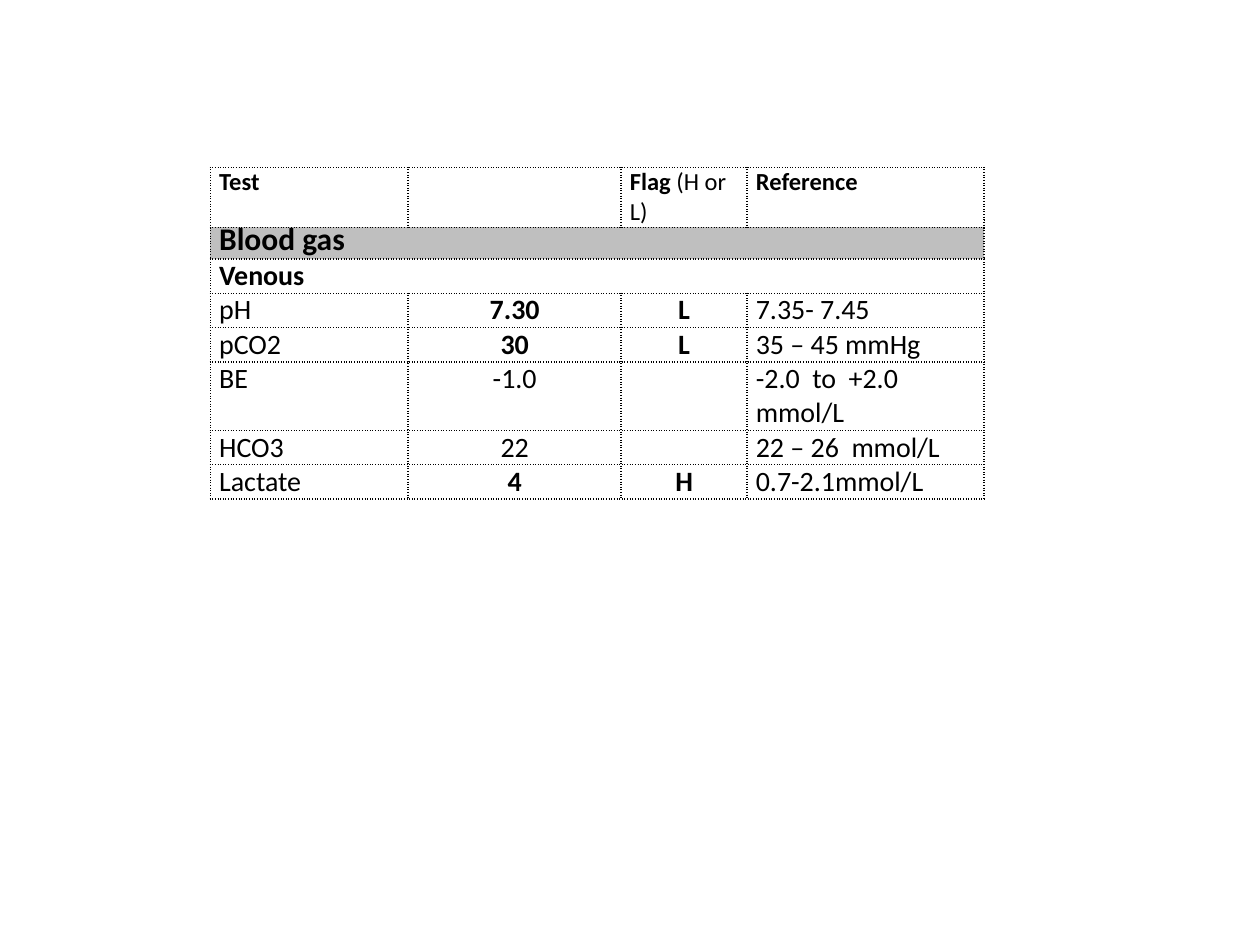
"""Build a slide with a blood gas results table."""
from dataclasses import dataclass
from itertools import product

from lxml.etree import SubElement
from pptx import Presentation
from pptx.dml.color import RGBColor as Rgb
from pptx.enum.text import PP_ALIGN as Align
from pptx.oxml import parse_xml
from pptx.oxml.ns import qn
from pptx.table import _Cell as Cell
from pptx.util import Pt


@dataclass(frozen=True)
class Theme:
    font: str = "Calibri"
    ink: Rgb = Rgb(0, 0, 0)
    band: Rgb = Rgb(0xBF, 0xBF, 0xBF)
    paper: Rgb = Rgb(255, 255, 255)
    header_size: float = 14
    section_size: float = 18
    body_size: float = 16
    border: float = 1
    inset: float = 5


@dataclass(frozen=True)
class Entry:
    text: str = ""
    bold: bool = False
    align: Align = Align.LEFT
    note: str = ""


@dataclass(frozen=True)
class Row:
    entries: tuple[Entry, ...]
    size: float
    fill: Rgb | None = None


@dataclass(frozen=True)
class Grid:
    top: float
    height: float
    row_height: float
    rows: tuple[Row, ...]


THEME = Theme()
LEFT = 120.24
COLUMNS = (113.04, 121.68, 72, 135.36)


def result(test: str, value: str, flag: str, reference: str) -> Row:
    """Return a result row, bold in the middle when it carries a flag."""
    bold = bool(flag)
    return Row(
        (
            Entry(test),
            Entry(value, bold, Align.CENTER),
            Entry(flag, bold, Align.CENTER),
            Entry(reference),
        ),
        THEME.body_size,
    )


RESULTS = Grid(
    top=126, height=156.24, row_height=13.68,
    rows=(
        Row((Entry("Blood gas", True),), THEME.section_size, THEME.band),
        Row((Entry("Venous", True),), THEME.body_size),
        result("pH", "7.30", "L", "7.35- 7.45"),
        result("pCO2", "30", "L", "35 – 45 mmHg"),
        result("BE", "-1.0", "", "-2.0  to  +2.0 mmol/L"),
        result("HCO3", "22", "", "22 – 26  mmol/L"),
        result("Lactate", "4", "H", "0.7-2.1mmol/L"),
    ),
)
HEADER = Grid(
    top=95.76, height=33.84, row_height=0,
    rows=(
        Row(
            (
                Entry("Test", True),
                Entry(),
                Entry("Flag ", True, note="(H or L)"),
                Entry("Reference", True),
            ),
            THEME.header_size,
            THEME.paper,
        ),
    ),
)


def draw_borders(cell: Cell) -> None:
    """Give a cell dotted lines on all four sides."""
    properties = cell._tc.get_or_add_tcPr()
    for index, side in enumerate(("lnL", "lnR", "lnT", "lnB")):
        properties.insert(index, parse_xml(
            f'<a:{side} xmlns:a="http://schemas.openxmlformats.org/drawingml/2006/main"'
            f' w="{Pt(THEME.border)}"><a:solidFill><a:srgbClr val="{THEME.ink}"/>'
            f'</a:solidFill><a:prstDash val="sysDot"/></a:{side}>'
        ))


def style_cell(cell: Cell, fill: Rgb | None) -> None:
    """Set the borders, margins and fill of a cell."""
    draw_borders(cell)
    cell.margin_left = cell.margin_right = Pt(THEME.inset)
    cell.margin_top = cell.margin_bottom = Pt(0)
    if fill is None:
        cell.fill.background()
    else:
        cell.fill.solid()
        cell.fill.fore_color.rgb = fill


def write_entry(cell: Cell, entry: Entry, size: float) -> None:
    """Write an entry, with its lighter note, into a cell."""
    para = cell.text_frame.paragraphs[0]
    if not entry.text:
        SubElement(para._p, qn("a:endParaRPr"), sz=str(int(size * 100)))
        return
    para.alignment = entry.align
    font = para.font
    font.name, font.size, font.bold = THEME.font, Pt(size), entry.bold
    font.color.rgb = THEME.ink
    para.add_run().text = entry.text
    if entry.note:
        span = para.add_run()
        span.text = entry.note
        span.font.bold = False


def draw_grid(page, grid: Grid) -> None:
    """Draw one table, merging rows that hold a single entry."""
    frame = page.shapes.add_table(
        len(grid.rows), len(COLUMNS),
        Pt(LEFT), Pt(grid.top), Pt(sum(COLUMNS)), Pt(grid.height),
    )
    table = frame.table
    table.first_row = table.horz_banding = False
    for column, width in zip(table.columns, COLUMNS):
        column.width = Pt(width)
    for line in table.rows:
        line.height = Pt(grid.row_height)
    frame.height = Pt(grid.height)
    for (i, row), j in product(enumerate(grid.rows), range(len(COLUMNS))):
        cell = table.cell(i, j)
        style_cell(cell, row.fill)
        entry = row.entries[j] if j < len(row.entries) else Entry()
        write_entry(cell, entry, row.size)
    for i, row in enumerate(grid.rows):
        if len(row.entries) == 1:
            table.cell(i, 0).merge(table.cell(i, len(COLUMNS) - 1))


def main() -> None:
    """Build and save the deck."""
    deck = Presentation()
    deck.slide_width, deck.slide_height = Pt(720), Pt(540)
    page = deck.slides.add_slide(deck.slide_layouts[6])
    for grid in (RESULTS, HEADER):
        draw_grid(page, grid)
    deck.save("out.pptx")


if __name__ == "__main__":
    main()
